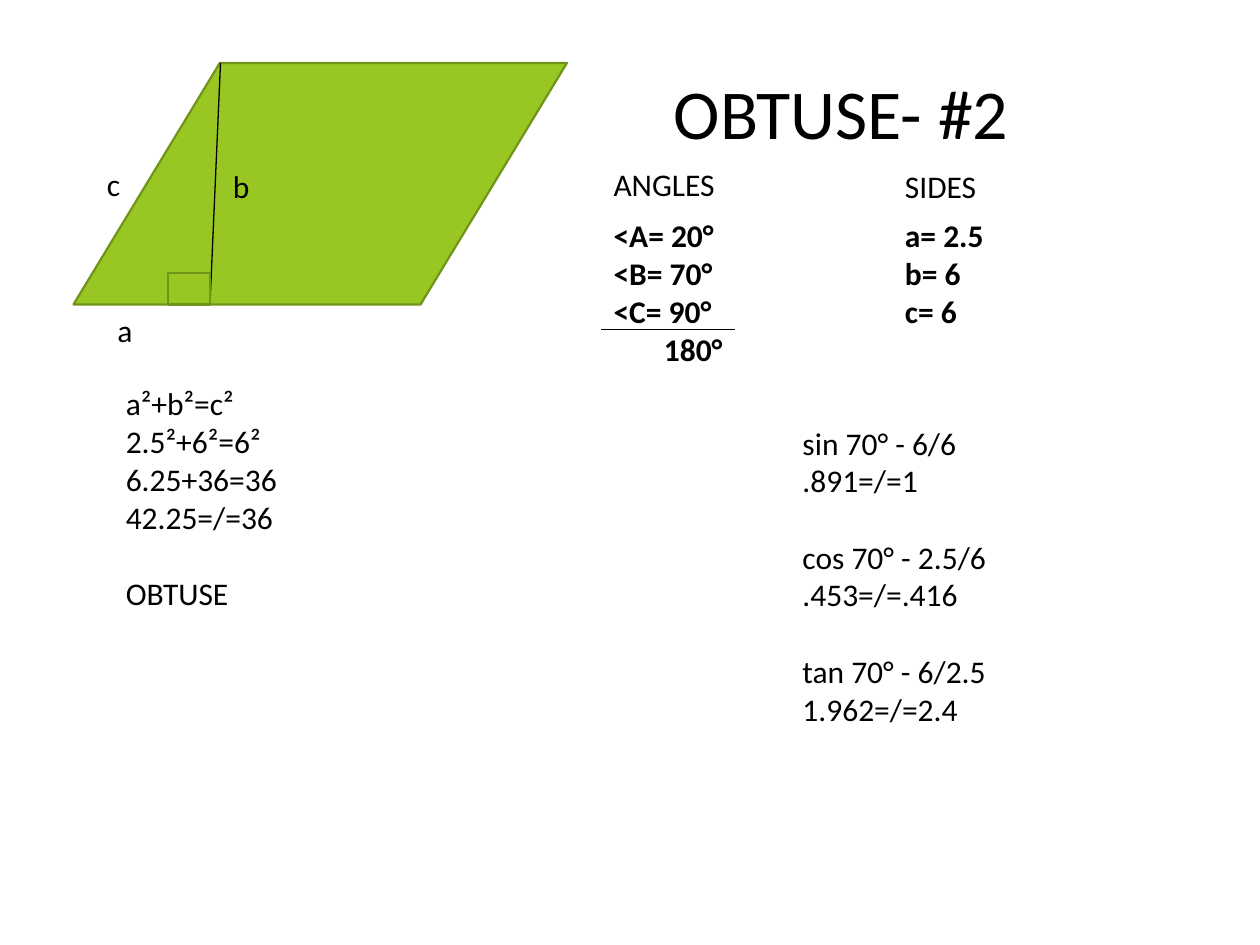
import pptx
import pptx.dml.color
import pptx.enum.shapes
import pptx.enum.text
import pptx.util
from lxml import etree
from pptx.oxml.ns import qn

GREEN = pptx.dml.color.RGBColor(0x98, 0xC7, 0x23)
DARK_GREEN = pptx.dml.color.RGBColor(0x70, 0x93, 0x1A)
BLACK = pptx.dml.color.RGBColor(0, 0, 0)
SHAPES = pptx.enum.shapes.MSO_SHAPE

# The slide is a grid of 120 columns by 90 rows, twelve to the inch
COLUMNS, ROWS = 120, 90
CELL = pptx.util.Inches(10) // COLUMNS
LINE_ROWS = 3.6
FONT_SIZE = 18
BLANK_LINE = pptx.util.Pt(22)


def cells(*counts):
    return [pptx.util.Emu(round(count * CELL)) for count in counts]


def add_lines(slide, left, top, width, lines, size=FONT_SIZE, bold=False):
    """Write one paragraph a line and return the paragraphs."""
    height = 1.2 + LINE_ROWS * len(lines) * size / FONT_SIZE
    box = slide.shapes.add_textbox(*cells(left, top, width, height))
    frame = box.text_frame
    frame.word_wrap = True
    frame.auto_size = pptx.enum.text.MSO_AUTO_SIZE.SHAPE_TO_FIT_TEXT
    paragraphs = []
    for index, line in enumerate(lines):
        paragraph = frame.add_paragraph() if index else frame.paragraphs[0]
        run = paragraph.add_run()
        run.text = line
        run.font.name = "Calibri"
        run.font.size = pptx.util.Pt(size)
        run.font.bold = bold
        run.font.color.rgb = BLACK
        paragraphs.append(paragraph)
    return paragraphs


def add_rule(slide, x1, y1, x2, y2):
    rule = slide.shapes.add_connector(
        pptx.enum.shapes.MSO_CONNECTOR.STRAIGHT, *cells(x1, y1, x2, y2))
    rule.line.color.rgb = BLACK
    rule.line.width = pptx.util.Pt(0.75)
    etree.SubElement(rule._element.spPr, qn("a:effectLst"))


def add_green(slide, kind, left, top, width, height):
    shape = slide.shapes.add_shape(kind, *cells(left, top, width, height))
    shape.shadow.inherit = False
    shape.fill.solid()
    shape.fill.fore_color.rgb = GREEN
    shape.line.color.rgb = DARK_GREEN
    shape.line.width = pptx.util.Pt(1.25)
    return shape


def add_diagram(slide, left, top, width, height):
    """Parallelogram with its height, right angle and side labels."""
    body = add_green(slide, SHAPES.PARALLELOGRAM, left, top, width, height)
    body.adjustments[0] = 0.606
    bottom = top + height
    foot = left + 13
    add_rule(slide, foot + 1, top, foot, bottom)
    add_green(slide, SHAPES.RECTANGLE, foot - 4, bottom - 3, 4, 3)
    for label, column, row, label_width in (
            ("a", 3, height, 6), ("c", 2, 9.1, 4), ("b", 14, 9.3, 7)):
        add_lines(slide, left + column, top + row, label_width, [label])


def add_measures(slide, left, top, width, heading, values):
    """Heading with bold values on the shared row below it."""
    add_lines(slide, left, top, width, [heading])
    return add_lines(slide, left, 20, width, values, bold=True)


def add_angles(slide, left, top, width):
    """Angles with a rule above their sum."""
    total = add_measures(slide, left, top, width, "ANGLES",
                         ["<A= 20°", "<B= 70°", "<C= 90°", "180°"])[-1]
    total._p.get_or_add_pPr().set("marL", str(pptx.util.Inches(0.4)))
    add_rule(slide, left, 31.4, left + 12.75, 31.4)


def add_working(slide, left, top, width, groups):
    """Groups of working, set one blank line apart."""
    lines = [line for group in groups for line in group]
    paragraphs = add_lines(slide, left, top, width, lines)
    start = 0
    for group in groups[:-1]:
        start += len(group)
        paragraphs[start].space_before = BLANK_LINE


def main():
    deck = pptx.Presentation()
    deck.slide_width, deck.slide_height = cells(COLUMNS, ROWS)
    slide = deck.slides.add_slide(deck.slide_layouts[6])

    add_diagram(slide, 7, 6, 47, 23)
    add_lines(slide, 63, 6, 47, ["OBTUSE- #2"], size=40)

    # Measures of the triangle
    add_angles(slide, 57.25, 15.1, 15)
    add_measures(slide, 85, 15.3, 15, "SIDES", ["a= 2.5", "b= 6", "c= 6"])

    # Pythagorean and trigonometric checks
    add_working(slide, 10.8, 36, 44, [
        ["a²+b²=c²", "2.5²+6²=6²", "6.25+36=36", "42.25=/=36"],
        ["OBTUSE"]])
    add_working(slide, 75.25, 39.75, 41, [
        ["sin 70° - 6/6", ".891=/=1"],
        ["cos 70° - 2.5/6", ".453=/=.416"],
        ["tan 70° - 6/2.5", "1.962=/=2.4"]])

    deck.save("out.pptx")


if __name__ == "__main__":
    main()
